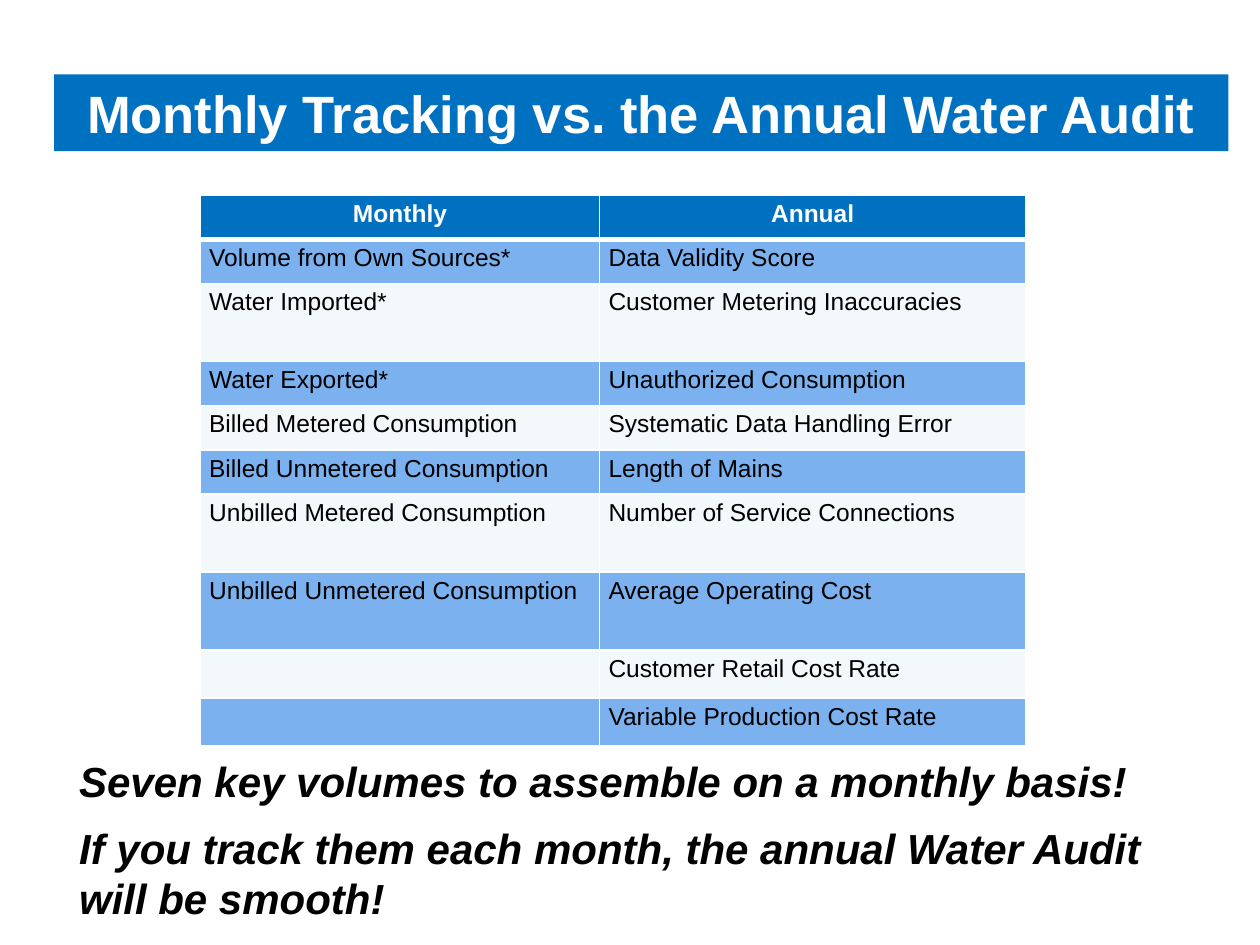
from dataclasses import dataclass
from typing import Any

from lxml.etree import SubElement
from pptx import Presentation
from pptx.dml.color import RGBColor
from pptx.enum.shapes import MSO_SHAPE
from pptx.enum.text import MSO_ANCHOR, PP_ALIGN
from pptx.oxml.ns import qn
from pptx.util import Inches, Pt

WHITE = RGBColor(0xFF, 0xFF, 0xFF)
BLACK = RGBColor(0, 0, 0)
BLUE = RGBColor(0x00, 0x70, 0xC0)
LIGHT_BLUE = RGBColor(0x7A, 0xB1, 0xEE)
PALE = RGBColor(0xF3, 0xF9, 0xFA)

TITLE = {"size": Pt(30), "bold": True}
HEADER = {"size": Pt(14), "bold": True}
BODY = {"size": Pt(14), "bold": False}
NOTE = {"size": Pt(24), "bold": True, "italic": True}
CELL_MARGINS = {
    "margin_left": Inches(0.07),
    "margin_right": Inches(0.07),
    "margin_top": Inches(0.04),
    "margin_bottom": Inches(0.04),
}


@dataclass
class Row:
    """One table row with its monthly and annual items."""

    monthly: str
    annual: str
    height: float = 0.35


ROWS = [
    Row("Monthly", "Annual"),
    Row("Volume from Own Sources*", "Data Validity Score"),
    Row("Water Imported*", "Customer Metering Inaccuracies", 0.62),
    Row("Water Exported*", "Unauthorized Consumption"),
    Row("Billed Metered Consumption", "Systematic Data Handling Error"),
    Row("Billed Unmetered Consumption", "Length of Mains"),
    Row("Unbilled Metered Consumption", "Number of Service Connections", 0.62),
    Row("Unbilled Unmetered Consumption", "Average Operating Cost", 0.62),
    Row("", "Customer Retail Cost Rate"),
    Row("", "Variable Production Cost Rate"),
]
COLUMN_WIDTHS = [3.17, 3.38]
NOTES = [
    "Seven key volumes to assemble on a monthly basis!",
    "If you track them each month, the annual Water Audit will be smooth!",
]


def set_attributes(target: Any, values: dict[str, Any]) -> None:
    """Set every named value on the target."""
    for name, value in values.items():
        setattr(target, name, value)


def write(p: Any, text: str, style: dict[str, Any], color: RGBColor) -> None:
    """Add a styled run to a paragraph."""
    r = p.add_run()
    r.text = text
    set_attributes(r.font, {"name": "Arial", **style})
    r.font.color.rgb = color


def add_title(s: Any, text: str) -> None:
    """Draw the title bar."""
    sp = s.shapes.add_shape(
        MSO_SHAPE.RECTANGLE, Inches(0.43), Inches(0.59), Inches(9.32), Inches(0.61)
    )
    sp.shadow.inherit = False
    sp.fill.solid()
    sp.fill.fore_color.rgb = BLUE
    sp.line.fill.background()
    tf = sp.text_frame
    set_attributes(tf, {"word_wrap": True, "vertical_anchor": MSO_ANCHOR.TOP})
    p = tf.paragraphs[0]
    p.alignment = PP_ALIGN.CENTER
    write(p, text, TITLE, WHITE)


def add_borders(cell: Any, bottom: float, top: float) -> None:
    """Give a cell white borders of the given widths in points."""
    tc_pr = cell._tc.get_or_add_tcPr()
    for side, width in {"L": 1, "R": 1, "T": top, "B": bottom}.items():
        ln = SubElement(tc_pr, qn(f"a:ln{side}"), w=str(Pt(width)))
        fill = SubElement(ln, qn("a:solidFill"))
        SubElement(fill, qn("a:srgbClr"), val=str(WHITE))


def add_audit_table(s: Any, rows: list[Row]) -> None:
    """Draw the monthly and annual comparison."""
    table = s.shapes.add_table(
        len(rows), len(COLUMN_WIDTHS), Inches(1.59), Inches(1.55),
        Inches(sum(COLUMN_WIDTHS)), Inches(sum(row.height for row in rows)),
    ).table
    set_attributes(table, {"horz_banding": False})
    for column, width in zip(table.columns, COLUMN_WIDTHS):
        column.width = Inches(width)
    for i, row in enumerate(rows):
        table.rows[i].height = Inches(row.height)
        is_header = i == 0
        fill = BLUE if is_header else LIGHT_BLUE if i % 2 else PALE
        for j, text in enumerate((row.monthly, row.annual)):
            cell = table.cell(i, j)
            set_attributes(cell, CELL_MARGINS)
            add_borders(cell, bottom=3 if is_header else 1, top=3 if i == 1 else 1)
            cell.fill.solid()
            cell.fill.fore_color.rgb = fill
            p = cell.text_frame.paragraphs[0]
            p.alignment = PP_ALIGN.CENTER if is_header else PP_ALIGN.LEFT
            write(p, text, HEADER if is_header else BODY, WHITE if is_header else BLACK)


def add_notes(s: Any, notes: list[str]) -> None:
    """Write the closing remarks below the table."""
    tf = s.shapes.add_textbox(
        Inches(0.53), Inches(5.95), Inches(8.64), Inches(1.44)
    ).text_frame
    tf.word_wrap = True
    for i, text in enumerate(notes):
        p = tf.add_paragraph() if i else tf.paragraphs[0]
        p.space_after = Pt(9)
        write(p, text, NOTE, BLACK)


def main() -> None:
    """Build and save the slide."""
    prs = Presentation()
    set_attributes(prs, {"slide_width": Inches(10), "slide_height": Inches(7.5)})
    s = prs.slides.add_slide(prs.slide_layouts[6])
    add_title(s, "Monthly Tracking vs. the Annual Water Audit")
    add_notes(s, NOTES)
    add_audit_table(s, ROWS)
    prs.save("out.pptx")


if __name__ == "__main__":
    main()
